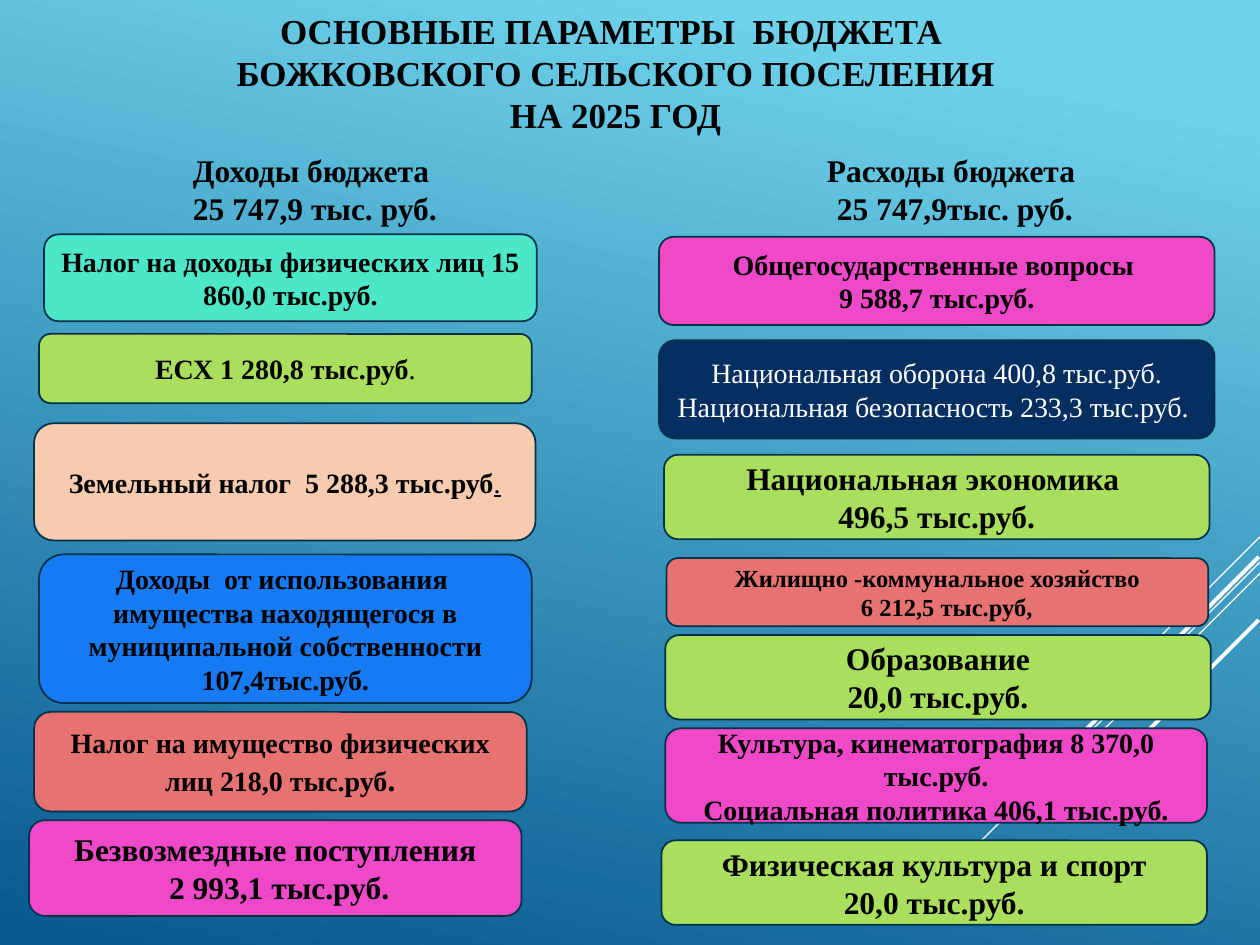
from lxml.etree import SubElement
from pptx import Presentation
from pptx.dml.color import RGBColor
from pptx.enum.shapes import MSO_CONNECTOR, MSO_SHAPE
from pptx.enum.text import MSO_ANCHOR, MSO_AUTO_SIZE, PP_ALIGN
from pptx.oxml.ns import qn
from pptx.util import Inches, Pt

FONT = "Times New Roman"
BLACK, WHITE, OUTLINE = "000000", "FFFFFF", "043148"
MINT, LIME, PEACH, CORAL = "4BE7C8", "AADF5E", "F6CBAF", "E67272"
PINK, BLUE, NAVY = "EF48C9", "167BF3", "052F61"
AMOUNT_SHIFT = -0.46

TITLE = ("ОСНОВНЫЕ ПАРАМЕТРЫ  БЮДЖЕТА \v БОЖКОВСКОГО СЕЛЬСКОГО ПОСЕЛЕНИЯ \v"
         "НА 2025 ГОД")

HEADINGS = [
    ((0.31, 1.15, 4.38, 0.71), "Доходы бюджета \n 25 747,9 тыс. руб. "),
    ((5.55, 1.15, 4.06, 0.71), "Расходы бюджета \n25 747,9тыс. руб."),
]

INCOME = [
    ((0.35, 1.86, 3.91, 0.69), MINT, 16, "Налог на доходы физических лиц 15 860,0 тыс.руб.", {}),
    ((0.31, 2.65, 3.91, 0.55), LIME, 16, "ЕСХ 1 280,8 тыс.руб", {"ending": {"bold": False}}),
    ((0.27, 3.36, 3.98, 0.93), PEACH, 16, "Земельный налог  5 288,3 тыс.руб",
     {"ending": {"bold": False, "underline": True}}),
    ((0.31, 4.40, 3.91, 1.18), BLUE, 16,
     "Доходы  от использования  имущества находящегося в "
     "муниципальной собственности 107,4тыс.руб.", {}),
    ((0.27, 5.65, 3.91, 0.79), CORAL, 16, "Налог на имущество физических лиц 218,0 тыс.руб",
     {"ending": {"size": Pt(18)}}),
    ((0.23, 6.51, 3.91, 0.76), PINK, 18, "Безвозмездные поступления\n 2 993,1 тыс.руб.", {}),
]

EXPENSES = [
    ((5.23, 1.88, 4.41, 0.70), PINK, 16, "Общегосударственные вопросы \n9 588,7 тыс.руб.", {}),
    ((5.23, 2.70, 4.41, 0.78), NAVY, 16,
     "Национальная оборона 400,8 тыс.руб.\nНациональная безопасность 233,3 тыс.руб. ",
     {"color": WHITE, "bold": False}),
    ((5.27, 3.61, 4.33, 0.67), LIME, 18, "Национальная экономика \n496,5 тыс.руб.",
     {"shift": AMOUNT_SHIFT}),
    ((5.29, 4.43, 4.30, 0.54), CORAL, 14, "Жилищно -коммунальное хозяйство\n6 212,5 тыс.руб,",
     {"shift": 0.15}),
    ((5.28, 5.04, 4.33, 0.67), LIME, 18, "Образование\n20,0 тыс.руб.", {"shift": AMOUNT_SHIFT}),
    ((5.28, 5.78, 4.30, 0.75), PINK, 16,
     "Культура, кинематография 8 370,0 тыс.руб.\nСоциальная политика 406,1 тыс.руб.", {}),
    ((5.25, 6.67, 4.33, 0.67), LIME, 18, "Физическая культура и спорт\n20,0 тыс.руб.",
     {"shift": AMOUNT_SHIFT}),
]

RAYS = [
    (10, 4.26, 0.83, 0.75),
    (10, 4.46, 2.70, 0.75),
    (10, 4.55, 1.72, 0.75),
    (9.99, 4.42, 1.58, 2.25),
    (9.99, 4.92, 1.14, 2.25),
]


def rgb(value):
    return RGBColor.from_string(value)


def inches(bounds):
    return [Inches(length) for length in bounds]


def write(frame, text, size, color=BLACK, bold=True):
    frame.text = text
    frame.word_wrap = True
    for paragraph in frame.paragraphs:
        paragraph.alignment = PP_ALIGN.CENTER
        for run in paragraph.runs:
            run.font.name = FONT
            run.font.size = Pt(size)
            run.font.bold = bold
            run.font.color.rgb = rgb(color)


def paint_background(slide):
    fill = slide.background.fill
    fill.gradient()
    fill.gradient_angle = 360 - 102
    for stop, (position, color) in zip(fill.gradient_stops, [(0.1, "6ED2EB"), (1, "06588E")]):
        stop.position = position
        stop.color.rgb = rgb(color)


def add_ray(slide, right, top, reach, width):
    ray = slide.shapes.add_connector(
        MSO_CONNECTOR.STRAIGHT, *inches((right, top, right - reach, top + reach)))
    ray.line.color.rgb = rgb(WHITE)
    ray.line.width = Pt(width)
    SubElement(ray._element.spPr, qn("a:effectLst"))


def set_title(slide):
    title = slide.shapes.title
    title.left, title.top, title.width, title.height = inches((0.47, 0.13, 8.83, 0.89))
    write(title.text_frame, TITLE, 20)
    title.text_frame.auto_size = MSO_AUTO_SIZE.NONE
    title.text_frame.vertical_anchor = MSO_ANCHOR.MIDDLE


def add_heading(slide, bounds, text):
    heading = slide.shapes.add_textbox(*inches(bounds))
    write(heading.text_frame, text, 18)


def add_budget_item(slide, bounds, fill, size, text, color=BLACK, bold=True,
                    ending=None, shift=0):
    item = slide.shapes.add_shape(MSO_SHAPE.ROUNDED_RECTANGLE, *inches(bounds))
    item.shadow.inherit = False
    item.fill.solid()
    item.fill.fore_color.rgb = rgb(fill)
    item.line.color.rgb = rgb(OUTLINE)
    item.line.width = Pt(1)
    frame = item.text_frame
    frame.vertical_anchor = MSO_ANCHOR.MIDDLE
    write(frame, text, size, color, bold)
    last = frame.paragraphs[-1]
    if shift:
        last._p.get_or_add_pPr().set("indent", str(Inches(shift)))
    if ending:
        period = last.add_run()
        period.text = "."
        style = {"name": FONT, "size": Pt(size), "bold": bold} | ending
        for attribute, value in style.items():
            setattr(period.font, attribute, value)
        period.font.color.rgb = rgb(color)


def main():
    deck = Presentation()
    deck.slide_width, deck.slide_height = Inches(10), Inches(7.5)
    slide = deck.slides.add_slide(deck.slide_layouts[5])
    paint_background(slide)
    for ray in RAYS:
        add_ray(slide, *ray)
    set_title(slide)
    for bounds, text in HEADINGS:
        add_heading(slide, bounds, text)
    for bounds, fill, size, text, options in INCOME + EXPENSES:
        add_budget_item(slide, bounds, fill, size, text, **options)
    deck.save("out.pptx")


if __name__ == "__main__":
    main()
